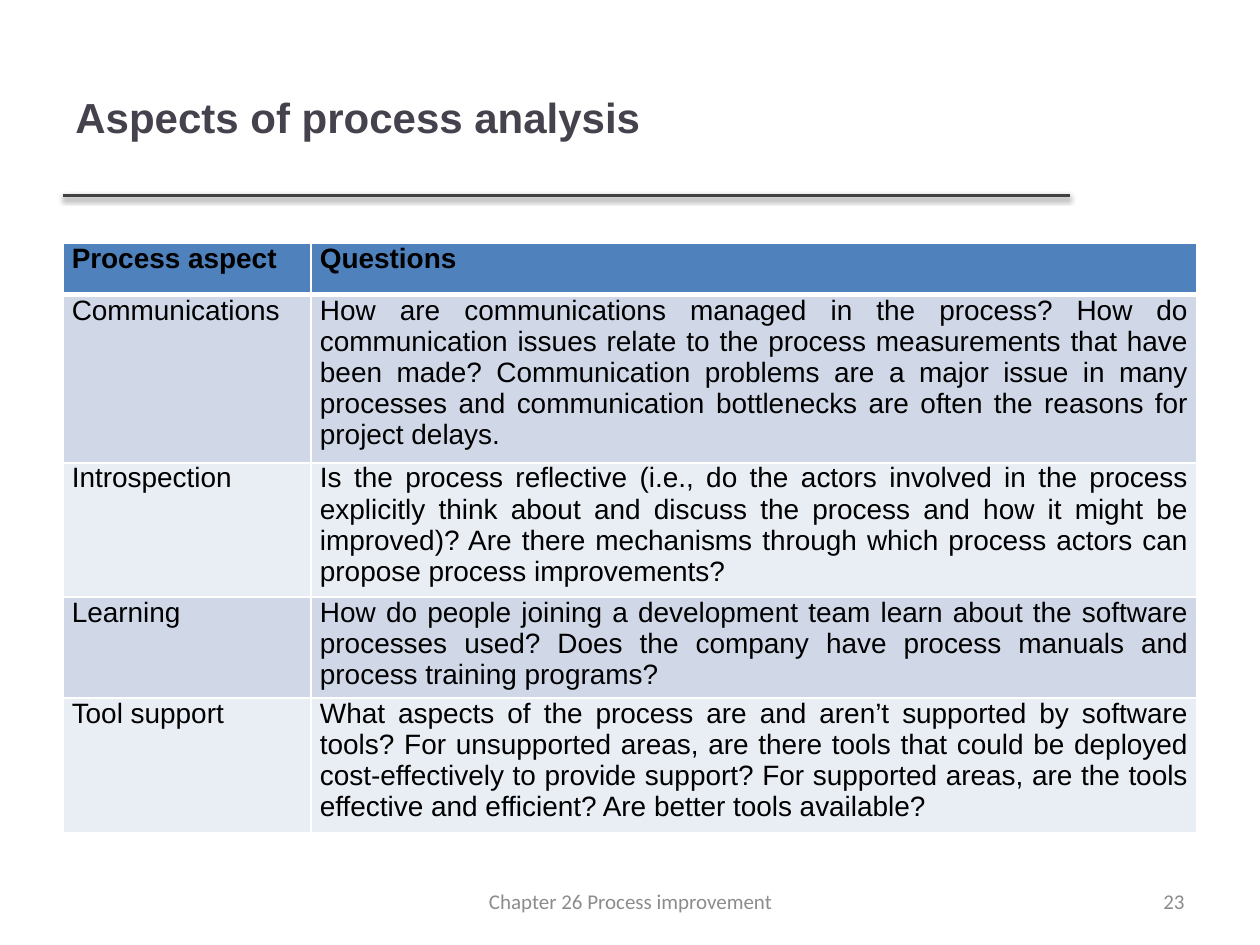
from dataclasses import dataclass

from lxml.etree import SubElement
from pptx import Presentation
from pptx.dml.color import RGBColor as Rgb
from pptx.enum.shapes import MSO_CONNECTOR as Connector
from pptx.enum.text import MSO_ANCHOR as Anchor, PP_ALIGN as Align
from pptx.oxml import parse_xml
from pptx.oxml.ns import nsdecls, qn
from pptx.util import Inches, Pt


@dataclass(frozen=True)
class TextStyle:
    size: int
    font: str
    color: str
    bold: bool = False


@dataclass(frozen=True)
class Theme:
    title: TextStyle = TextStyle(24, "Arial", "46424D", True)
    heading: TextStyle = TextStyle(16, "Arial", "000000", True)
    body: TextStyle = TextStyle(16, "Arial", "000000")
    footer: TextStyle = TextStyle(12, "Calibri", "8C8C8C")
    rule: str = "404040"
    border: str = "FFFFFF"
    header_fill: str = "4F81BD"
    band_fills: tuple[str, str] = ("D0D8E8", "E9EDF4")


@dataclass(frozen=True)
class Label:
    text: str
    left: float
    top: float
    width: float
    height: float
    style: TextStyle
    align: Align


@dataclass(frozen=True)
class Aspect:
    name: str
    questions: str


THEME = Theme()
LABELS = [
    Label("Aspects of process analysis", 0.5, 0.3, 7.98, 1.25, THEME.title, Align.LEFT),
    Label("23", 7.17, 6.95, 2.33, 0.4, THEME.footer, Align.RIGHT),
    Label("Chapter 26 Process improvement", 3.42, 6.95, 3.17, 0.4, THEME.footer, Align.CENTER),
]
ASPECTS = [
    Aspect("Process aspect", "Questions"),
    Aspect(
        "Communications",
        "How are communications managed in the process? How do communication issues "
        "relate to the process measurements that have been made? Communication problems "
        "are a major issue in many processes and communication bottlenecks are often the "
        "reasons for project delays.",
    ),
    Aspect(
        "Introspection",
        "Is the process reflective (i.e., do the actors involved in the process explicitly "
        "think about and discuss the process and how it might be improved)? Are there "
        "mechanisms through which process actors can propose process improvements?",
    ),
    Aspect(
        "Learning",
        "How do people joining a development team learn about the software processes used? "
        "Does the company have process manuals and process training programs?",
    ),
    Aspect(
        "Tool support",
        "What aspects of the process are and aren’t supported by software tools? For "
        "unsupported areas, are there tools that could be deployed cost-effectively to "
        "provide support? For supported areas, are the tools effective and efficient? Are "
        "better tools available?",
    ),
]
COLUMN_WIDTHS = (1.97, 7.03)
ROW_HEIGHT = 0.41
TAB_STOPS = (0.38, 0.75, 1.12)


def add_run(paragraph, text: str, style: TextStyle) -> None:
    run = paragraph.add_run()
    run.text = text
    run.font.size = Pt(style.size)
    run.font.name = style.font
    run.font.bold = style.bold
    run.font.color.rgb = Rgb.from_string(style.color)


def add_label(slide, label: Label) -> None:
    box = slide.shapes.add_textbox(
        Inches(label.left), Inches(label.top), Inches(label.width), Inches(label.height)
    )
    frame = box.text_frame
    frame.word_wrap = True
    frame.vertical_anchor = Anchor.MIDDLE
    frame.paragraphs[0].alignment = label.align
    add_run(frame.paragraphs[0], label.text, label.style)


def add_title_rule(slide) -> None:
    rule = slide.shapes.add_connector(
        Connector.STRAIGHT, Inches(0.5), Inches(1.55), Inches(8.49), Inches(1.55)
    )
    rule.line.color.rgb = Rgb.from_string(THEME.rule)
    rule.line.width = Pt(2)
    rule._element.spPr.append(parse_xml(
        f'<a:effectLst {nsdecls("a")}><a:outerShdw blurRad="{Pt(3.1)}" dist="{Pt(1.6)}" '
        'dir="5400000" rotWithShape="0"><a:srgbClr val="000000"><a:alpha val="38000"/>'
        '</a:srgbClr></a:outerShdw></a:effectLst>'
    ))


def add_borders(cell, top: int, bottom: int) -> None:
    properties = cell._tc.get_or_add_tcPr()
    for side, width in (("L", 1), ("R", 1), ("T", top), ("B", bottom)):
        properties.append(parse_xml(
            f'<a:ln{side} {nsdecls("a")} w="{Pt(width)}"><a:solidFill>'
            f'<a:srgbClr val="{THEME.border}"/></a:solidFill></a:ln{side}>'
        ))


def fill_cell(cell, text: str, row: int, align: Align) -> None:
    is_header = row == 0
    add_borders(cell, top=3 if row == 1 else 1, bottom=3 if is_header else 1)
    cell.fill.solid()
    fill = THEME.header_fill if is_header else THEME.band_fills[(row - 1) % 2]
    cell.fill.fore_color.rgb = Rgb.from_string(fill)
    cell.margin_left = cell.margin_right = Inches(0.07)
    cell.margin_top = cell.margin_bottom = Inches(0)
    paragraph = cell.text_frame.paragraphs[0]
    paragraph.alignment = align
    paragraph.space_after = Pt(3)
    tabs = SubElement(paragraph._p.get_or_add_pPr(), qn("a:tabLst"))
    for stop in TAB_STOPS:
        SubElement(tabs, qn("a:tab"), pos=str(Inches(stop)), algn="l")
    add_run(paragraph, text, THEME.heading if is_header else THEME.body)


def add_aspect_table(slide, aspects: list[Aspect]) -> None:
    frame = slide.shapes.add_table(
        len(aspects), len(COLUMN_WIDTHS), Inches(0.5), Inches(1.93),
        Inches(sum(COLUMN_WIDTHS)), Inches(ROW_HEIGHT * len(aspects)),
    )
    table = frame.table
    for column, width in zip(table.columns, COLUMN_WIDTHS):
        column.width = Inches(width)
    for row, aspect in enumerate(aspects):
        table.rows[row].height = Inches(ROW_HEIGHT)
        name_align = Align.JUSTIFY if row == 0 else Align.LEFT
        fill_cell(table.cell(row, 0), aspect.name, row, name_align)
        fill_cell(table.cell(row, 1), aspect.questions, row, Align.JUSTIFY)
    frame.height = Inches(4.67)


def main() -> None:
    deck = Presentation()
    deck.slide_width, deck.slide_height = Inches(10), Inches(7.5)
    slide = deck.slides.add_slide(deck.slide_layouts[6])
    add_title_rule(slide)
    title, *footers = LABELS
    add_label(slide, title)
    add_aspect_table(slide, ASPECTS)
    for footer in footers:
        add_label(slide, footer)
    deck.save("out.pptx")


if __name__ == "__main__":
    main()
